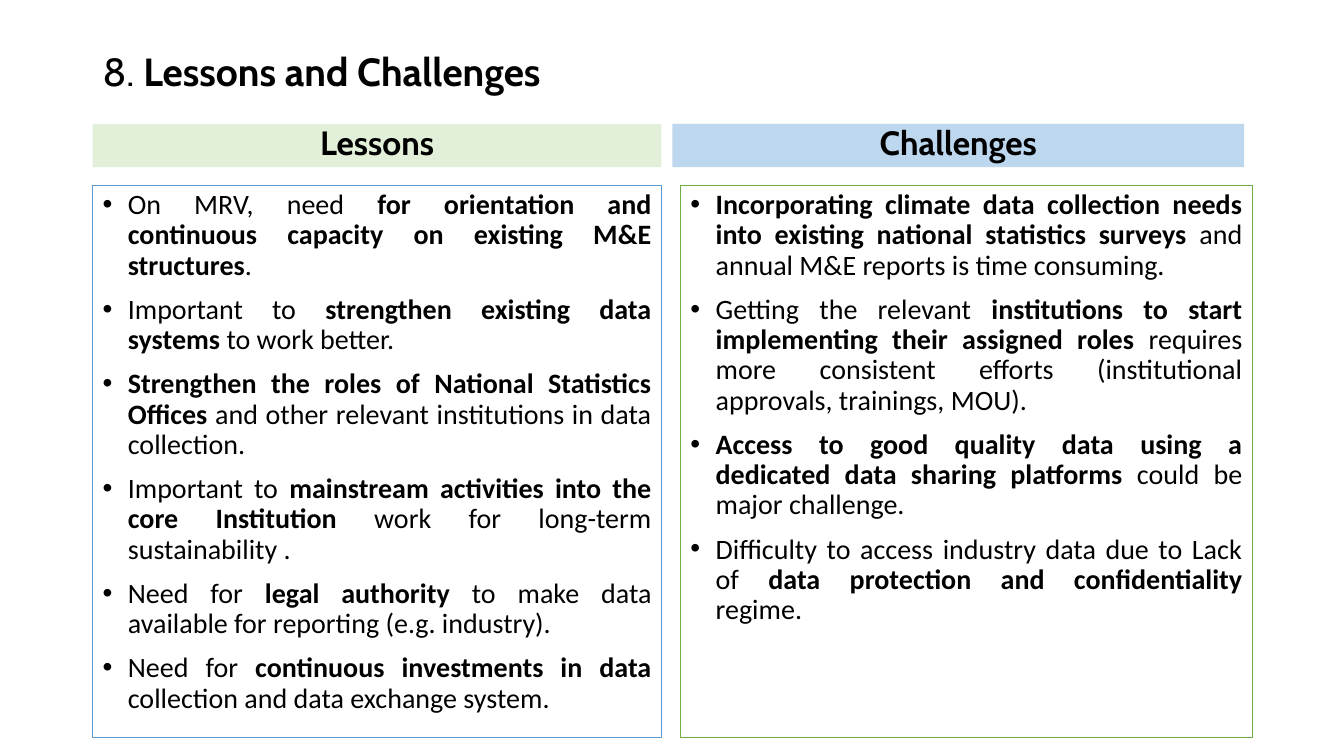
from dataclasses import dataclass

from lxml.etree import SubElement
from pptx import Presentation
from pptx.dml.color import RGBColor
from pptx.enum.shapes import MSO_SHAPE
from pptx.enum.text import MSO_ANCHOR, PP_ALIGN
from pptx.oxml.ns import qn
from pptx.util import Inches, Pt


@dataclass(frozen=True)
class Theme:
    """Colours, fonts and type sizes of the slide."""
    ink: str = "000000"
    lessons_fill: str = "E2F0D9"
    lessons_line: str = "5B9BD5"
    challenges_fill: str = "BDD7EE"
    challenges_line: str = "70AD47"
    heading_font: str = "Cabin"
    body_font: str = "Calibri"
    title_size: int = 28
    heading_size: int = 24
    body_size: int = 20
    outline: float = 0.75
    paragraph_gap: int = 10
    indent: float = 0.25


LESSONS = [
    "On MRV, need |for orientation and continuous capacity on existing M&E structures|.",
    "Important to |strengthen existing data systems |to work better.",
    "|Strengthen the roles of National Statistics Offices "
    "|and other relevant institutions in data collection.",
    "Important to |mainstream activities into the core Institution "
    "|work for long-term sustainability .",
    "Need for |legal authority |to make data available for reporting (e.g. industry).",
    "Need for |continuous investments in data |collection and data exchange system.",
]
CHALLENGES = [
    "|Incorporating climate data collection needs into existing national statistics surveys "
    "|and annual M&E reports is time consuming. ",
    "Getting the relevant |institutions to start implementing their assigned roles "
    "|requires more consistent efforts (institutional approvals, trainings, MOU).",
    "|Access to good quality data using a dedicated data sharing platforms "
    "|could be major challenge.",
    "Difficulty to access industry data due to Lack of "
    "|data protection and confidentiality |regime.",
]


class SlideBuilder:
    """Draws titles, headings and bullet panels on one slide."""

    def __init__(self, slide, theme):
        self.slide = slide
        self.theme = theme

    def add_text(self, paragraph, marked, font, size, spacing):
        """Fill a paragraph, setting every second part between bars in bold."""
        paragraph.line_spacing = spacing
        for position, part in enumerate(marked.split("|")):
            if part:
                run = paragraph.add_run()
                run.text = part
                run.font.name = font
                run.font.size = Pt(size)
                run.font.bold = position % 2 == 1
                run.font.color.rgb = RGBColor.from_string(self.theme.ink)

    def title(self, marked, left, top, width, height):
        """Add the slide title."""
        frame = self.slide.shapes.add_textbox(
            Inches(left), Inches(top), Inches(width), Inches(height)).text_frame
        frame.word_wrap = True
        frame.vertical_anchor = MSO_ANCHOR.MIDDLE
        self.add_text(frame.paragraphs[0], marked, self.theme.heading_font,
                      self.theme.title_size, 0.9)

    def box(self, left, top, width, height, anchor):
        """Add a plain rectangle ready for text."""
        box = self.slide.shapes.add_shape(
            MSO_SHAPE.RECTANGLE, Inches(left), Inches(top), Inches(width), Inches(height))
        box.shadow.inherit = False
        box.text_frame.word_wrap = True
        box.text_frame.vertical_anchor = anchor
        return box

    def heading(self, label, fill, left, top, width, height):
        """Add a filled column heading."""
        band = self.box(left, top, width, height, MSO_ANCHOR.BOTTOM)
        band.fill.solid()
        band.fill.fore_color.rgb = RGBColor.from_string(fill)
        band.line.fill.background()
        paragraph = band.text_frame.paragraphs[0]
        paragraph.alignment = PP_ALIGN.CENTER
        paragraph.space_before = Pt(self.theme.paragraph_gap)
        self.add_text(paragraph, f"|{label}|", self.theme.heading_font,
                      self.theme.heading_size, 0.8)

    def panel(self, points, outline, left, top, width, height):
        """Add an outlined panel of justified bullets."""
        panel = self.box(left, top, width, height, MSO_ANCHOR.TOP)
        panel.fill.background()
        panel.line.color.rgb = RGBColor.from_string(outline)
        panel.line.width = Pt(self.theme.outline)
        frame = panel.text_frame
        for position, point in enumerate(points):
            paragraph = frame.add_paragraph() if position else frame.paragraphs[0]
            paragraph.alignment = PP_ALIGN.JUSTIFY
            paragraph.space_before = Pt(self.theme.paragraph_gap)
            self.add_text(paragraph, point, self.theme.body_font, self.theme.body_size, 0.9)
            self.bullet(paragraph)

    def bullet(self, paragraph):
        """Give a paragraph a round bullet with a hanging indent."""
        properties = paragraph._p.get_or_add_pPr()
        properties.set("marL", str(Inches(self.theme.indent)))
        properties.set("indent", str(-Inches(self.theme.indent)))
        SubElement(properties, qn("a:buFont"), typeface="Arial")
        SubElement(properties, qn("a:buChar"), char="•")


def main():
    """Build and save the slide."""
    presentation = Presentation()
    presentation.slide_width = Inches(13.33)
    presentation.slide_height = Inches(7.5)
    theme = Theme()
    builder = SlideBuilder(
        presentation.slides.add_slide(presentation.slide_layouts[6]), theme)

    builder.title("8. |Lessons and Challenges|", 0.92, 0.4, 11.5, 0.66)
    columns = [
        ("Lessons", LESSONS, theme.lessons_fill, theme.lessons_line, 0.92, 0.92, 5.64),
        ("Challenges", CHALLENGES, theme.challenges_fill, theme.challenges_line,
         6.67, 6.75, 5.67),
    ]
    for label, points, fill, outline, heading_left, panel_left, width in columns:
        builder.heading(label, fill, heading_left, 1.23, width, 0.43)
        builder.panel(points, outline, panel_left, 1.84, width, 5.48)

    presentation.save("out.pptx")


if __name__ == "__main__":
    main()
